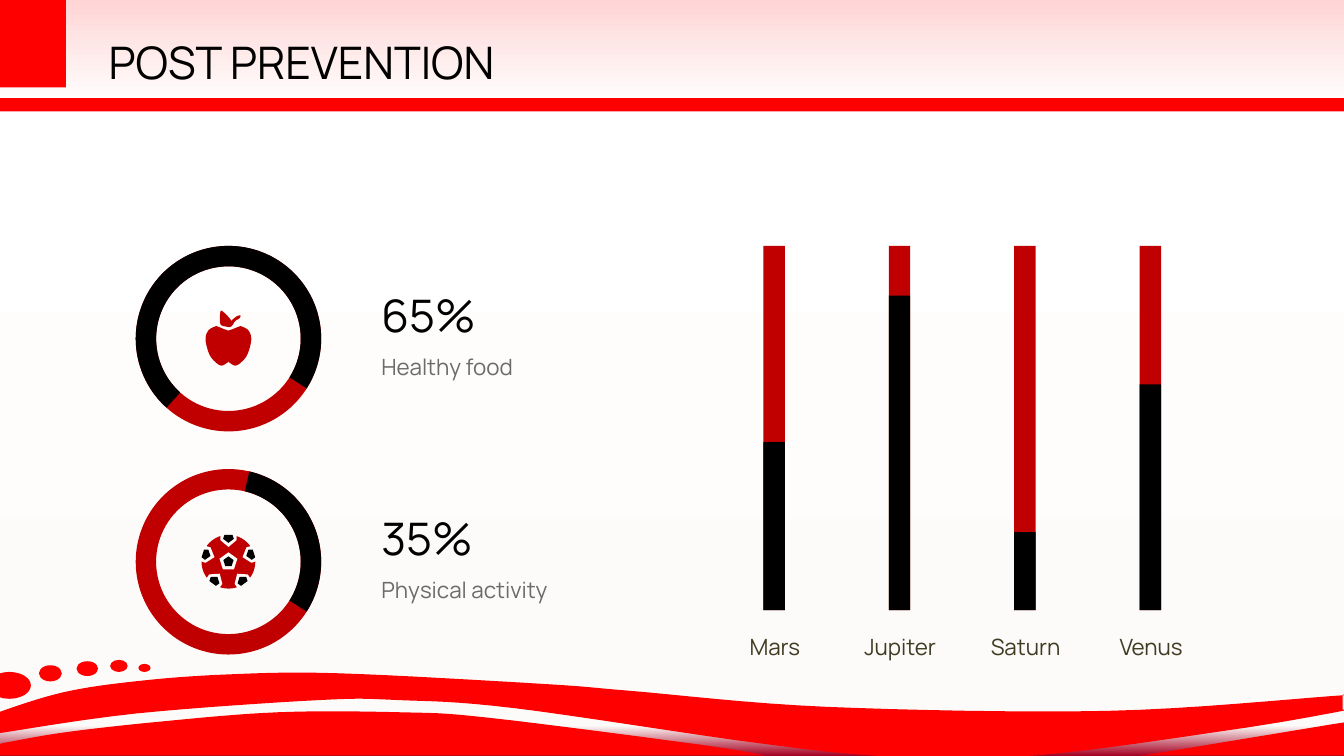
from math import cos, radians, sin

from lxml import etree
from pptx import Presentation
from pptx.dml.color import RGBColor
from pptx.enum.shapes import MSO_SHAPE
from pptx.enum.text import MSO_ANCHOR, PP_ALIGN
from pptx.oxml.ns import qn
from pptx.util import Inches, Pt

SLIDE_WIDTH = 10
SLIDE_HEIGHT = SLIDE_WIDTH * 9 / 16

FONT = "Manrope"
RED, CRIMSON, BLACK = "FF0000", "C00000", "000000"
GREY, BROWN, PAPER = "6B6B6B", "403B22", "FDFCFB"

BACKDROP_STOPS = [(0, "FFD5D5"), (14, "FFFFFF"), (96, "FCFBF9"), (100, "A50021")]

# Each outline is a list of edges; an edge is a smooth run of points.
WAVES = [
    [[(-0.03, 5.33), (0.02, 5.29), (0.48, 5.15), (1.01, 5.07), (1.67, 5.02), (2.51, 5.01),
      (4.05, 5.09), (4.68, 5.14), (6.15, 5.26), (8.24, 5.29), (9.91, 5.18), (9.99, 5.17)],
     [(9.99, 5.28), (9.94, 5.3), (9.17, 5.43), (7.72, 5.62), (6.64, 5.63), (5.64, 5.53),
      (3.83, 5.27), (2.97, 5.21), (2.37, 5.21), (1.01, 5.31), (-0.03, 5.46)]],
    [[(-0.04, 5.62), (-0.04, 5.55)],
     [(0.02, 5.53), (0.48, 5.45), (1.19, 5.37), (2.07, 5.3), (2.97, 5.3), (3.63, 5.34),
      (5.2, 5.54), (5.69, 5.62)]],
    [[(8.49, 5.62), (8.7, 5.59), (9.91, 5.39), (10, 5.38)], [(10, 5.62)]],
]
DROPLETS = [(-0.09, 5, 0.32, 0.2), (0.29, 4.95, 0.17, 0.12), (0.57, 4.92, 0.16, 0.11),
            (0.82, 4.91, 0.13, 0.09), (1.03, 4.94, 0.09, 0.06)]

RING_LEFT, RING_SIZE, ARC_END = 1.01, 1.38, 32.45
ICON_X = 1.7
HABITS = [("65%", "Healthy food", 1.83, 131.9), ("35%", "Physical activity", 3.49, 283.03)]

# Left half of the apple, measured from its axis.
APPLE_HALF = [(0, 2.46), (-0.03, 2.45), (-0.08, 2.43), (-0.1, 2.43), (-0.15, 2.46),
              (-0.17, 2.53), (-0.14, 2.64), (-0.09, 2.7), (-0.05, 2.72), (-0.01, 2.7),
              (0, 2.69)]
APPLE_LEAF = [[(1.72, 2.39), (1.71, 2.37), (1.66, 2.32), (1.64, 2.32), (1.64, 2.41),
               (1.68, 2.43), (1.72, 2.43), (1.75, 2.39), (1.78, 2.37), (1.79, 2.35),
               (1.77, 2.35), (1.74, 2.37), (1.72, 2.39)]]

BALL_Y, BALL_RADIUS = 4.18, 0.2
# Top patch and its seam, measured from the centre of the ball.
PATCH = [(-0.03, -0.2), (-0.04, -0.17), (0, -0.14), (0.04, -0.17), (0.03, -0.2)]
SEAM = [(-0.06, -0.21), (-0.06, -0.16), (0, -0.11), (0.06, -0.16), (0.06, -0.21)]

BAR_LEFT, BAR_STEP, BAR_WIDTH = 5.68, 2.8 / 3, 0.16
BAR_TOP, BAR_BOTTOM = 1.83, 4.54
PLANETS = [("Mars", 1.25), ("Jupiter", 2.34), ("Saturn", 0.58), ("Venus", 1.68)]


def color(hex_string):
    return RGBColor.from_string(hex_string)


def paint(shape, fill):
    shape.shadow.inherit = False
    shape.line.fill.background()
    shape.fill.solid()
    shape.fill.fore_color.rgb = color(fill)


def add_preset(slide, kind, left, top, width, height, fill, adjustments=()):
    shape = slide.shapes.add_shape(
        kind, Inches(left), Inches(top), Inches(width), Inches(height))
    paint(shape, fill)
    for index, value in enumerate(adjustments):
        shape.adjustments[index] = value
    return shape


def smooth(points, steps=8):
    """Run a Catmull-Rom curve through the points."""
    padded = [points[0], *points, points[-1]]
    curve = [points[0]]
    for a, b, c, d in zip(padded, padded[1:], padded[2:], padded[3:]):
        for step in range(1, steps + 1):
            t = step / steps
            curve.append(tuple(
                (2 * q + (r - p) * t + (2 * p - 5 * q + 4 * r - s) * t ** 2
                 + (3 * q - p - 3 * r + s) * t ** 3) / 2
                for p, q, r, s in zip(a, b, c, d)))
    return curve


def add_outline(slide, points, fill):
    corners = [(Inches(x), Inches(y)) for x, y in points]
    builder = slide.shapes.build_freeform(*corners[0])
    builder.add_line_segments(corners[1:], close=True)
    paint(builder.convert_to_shape(), fill)


def add_curved_outline(slide, edges, fill):
    add_outline(slide, [point for edge in edges for point in smooth(edge)], fill)


def add_text(slide, text, left, top, width, height, size, ink,
             anchor=MSO_ANCHOR.TOP, align=PP_ALIGN.LEFT):
    frame = slide.shapes.add_textbox(
        Inches(left), Inches(top), Inches(width), Inches(height)).text_frame
    frame.word_wrap = True
    frame.vertical_anchor = anchor
    frame.margin_left = frame.margin_right = Inches(0.1)
    frame.margin_top = frame.margin_bottom = Inches(0.1)
    paragraph = frame.paragraphs[0]
    paragraph.text = text
    paragraph.alignment = align
    paragraph.font.name = FONT
    paragraph.font.size = Pt(size)
    paragraph.font.color.rgb = color(ink)


def add_backdrop(slide):
    backdrop = add_preset(slide, MSO_SHAPE.RECTANGLE, 0, 0, SLIDE_WIDTH, SLIDE_HEIGHT, PAPER)
    backdrop.fill.gradient()
    backdrop.fill.gradient_angle = 270
    stop_list = backdrop.fill._fill._gradFill.find(qn("a:gsLst"))
    for stop in list(stop_list):
        stop_list.remove(stop)
    for percent, tint in BACKDROP_STOPS:
        stop = etree.SubElement(stop_list, qn("a:gs"), pos=str(percent * 1000))
        etree.SubElement(stop, qn("a:srgbClr"), val=tint)


def add_decoration(slide):
    add_backdrop(slide)
    add_preset(slide, MSO_SHAPE.RECTANGLE, 0, 0.73, SLIDE_WIDTH, 0.1, RED)
    add_preset(slide, MSO_SHAPE.RECTANGLE, 0, -0.01, 0.49, 0.66, RED)
    for edges in WAVES:
        add_curved_outline(slide, edges, RED)
    for droplet in DROPLETS:
        add_preset(slide, MSO_SHAPE.OVAL, *droplet, RED)


def add_habit(slide, share, habit, top, arc_start):
    ring = (RING_LEFT, top, RING_SIZE, RING_SIZE)
    add_preset(slide, MSO_SHAPE.DONUT, *ring, CRIMSON, [0.11])
    # Angles are stored in 60000ths of a degree, adjustments in 100000ths.
    add_preset(slide, MSO_SHAPE.BLOCK_ARC, *ring, BLACK,
               [arc_start * 0.6, ARC_END * 0.6, 0.11])
    add_text(slide, habit, 2.74, top + 0.7, 1.73, 0.47, 12, GREY)
    add_text(slide, share, 2.74, top + 0.22, 1.73, 0.58, 24, BLACK, MSO_ANCHOR.MIDDLE)


def add_apple(slide):
    left = [(ICON_X + x, y) for x, y in APPLE_HALF]
    right = [(ICON_X - x, y) for x, y in reversed(APPLE_HALF)]
    add_curved_outline(slide, [left, right], CRIMSON)
    add_curved_outline(slide, APPLE_LEAF, CRIMSON)


def on_ball(points, degrees):
    """Turn points about the ball's centre and place them on the slide."""
    c, s = cos(radians(degrees)), sin(radians(degrees))
    return [(ICON_X + x * c - y * s, BALL_Y + x * s + y * c) for x, y in points]


def add_ball(slide):
    add_preset(slide, MSO_SHAPE.OVAL, ICON_X - BALL_RADIUS, BALL_Y - BALL_RADIUS,
               2 * BALL_RADIUS, 2 * BALL_RADIUS, CRIMSON)
    turns = range(0, 360, 72)
    for radius, fill in [(0.07, PAPER), (0.04, BLACK)]:
        add_outline(slide, [on_ball([(0, -radius)], turn)[0] for turn in turns], fill)
    for turn in turns:
        add_outline(slide, on_ball(SEAM, turn), PAPER)
        add_outline(slide, on_ball(PATCH, turn), BLACK)


def add_bar(slide, planet, black_height, left):
    for height, fill in [(BAR_BOTTOM - BAR_TOP, CRIMSON), (black_height, BLACK)]:
        add_preset(slide, MSO_SHAPE.RECTANGLE, left, BAR_BOTTOM - height,
                   BAR_WIDTH, height, fill)
    add_text(slide, planet, left - 0.34, 4.61, 0.85, 0.47, 12, BROWN,
             align=PP_ALIGN.CENTER)


def main():
    deck = Presentation()
    deck.slide_width, deck.slide_height = Inches(SLIDE_WIDTH), Inches(SLIDE_HEIGHT)
    slide = deck.slides.add_slide(deck.slide_layouts[6])
    add_decoration(slide)
    add_text(slide, "POST PREVENTION", 0.71, 0.14, 5.13, 0.63, 24, BLACK,
             MSO_ANCHOR.MIDDLE)
    for habit in HABITS:
        add_habit(slide, *habit)
    add_apple(slide)
    add_ball(slide)
    for index, (planet, black_height) in enumerate(PLANETS):
        add_bar(slide, planet, black_height, BAR_LEFT + index * BAR_STEP)
    deck.save("out.pptx")


if __name__ == "__main__":
    main()
